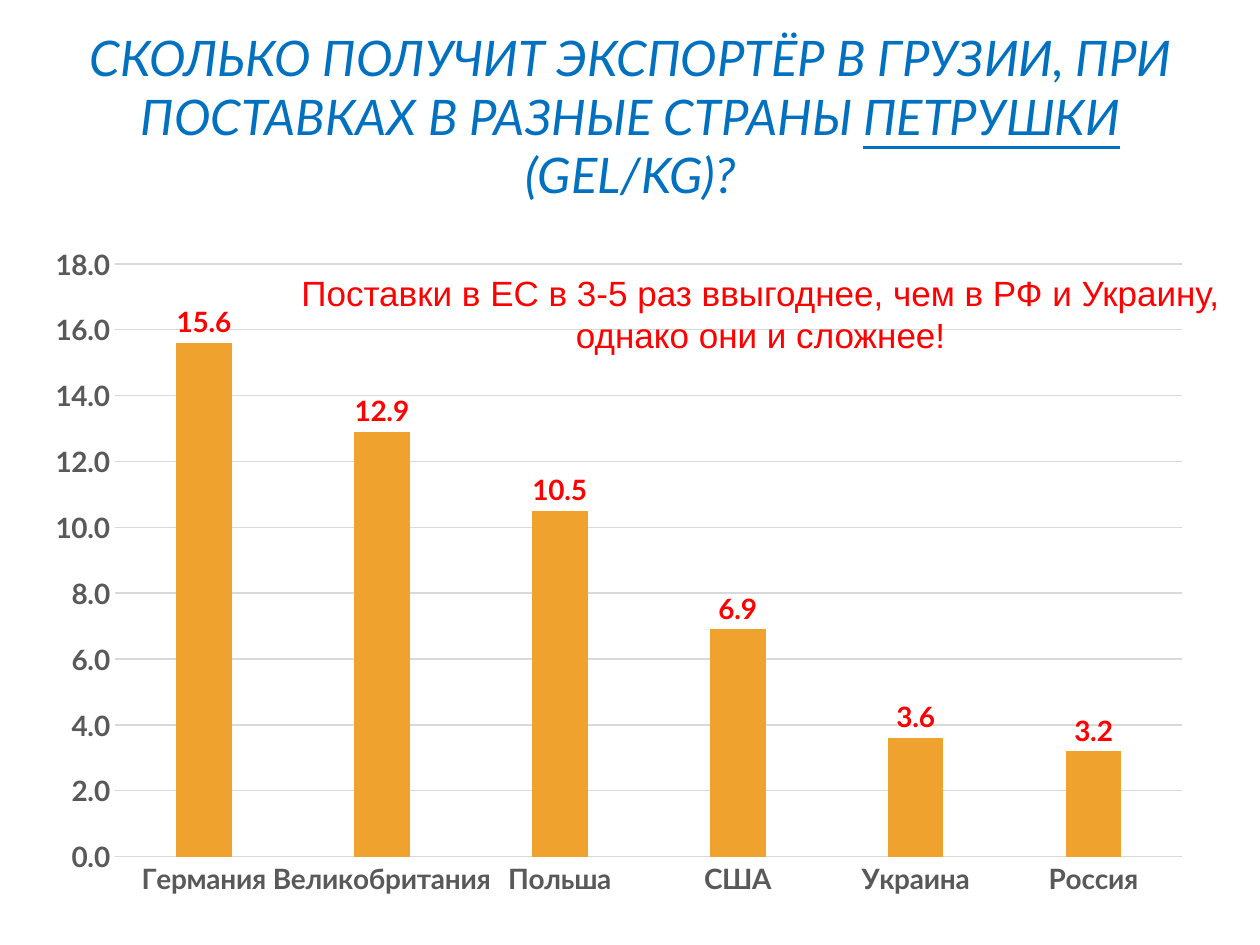
from dataclasses import dataclass

from pptx import Presentation
from pptx.chart.data import CategoryChartData
from pptx.dml.color import RGBColor as RGB
from pptx.enum.chart import XL_CHART_TYPE as ChartType
from pptx.enum.chart import XL_LABEL_POSITION as LabelPos
from pptx.enum.chart import XL_TICK_MARK as Tick
from pptx.enum.text import MSO_ANCHOR as Anchor
from pptx.enum.text import PP_ALIGN as Align
from pptx.util import Emu, Pt


@dataclass(frozen=True)
class Theme:
    title: RGB = RGB(0x00, 0x70, 0xC0)
    accent: RGB = RGB(0xFF, 0x00, 0x00)
    bar: RGB = RGB(0xF0, 0xA2, 0x2E)
    axis: RGB = RGB(0x59, 0x59, 0x59)
    grid: RGB = RGB(0xD9, 0xD9, 0xD9)
    paper: RGB = RGB(0xFF, 0xFF, 0xFF)
    font: str = "Lato"
    note_font: str = "Arial"
    title_size: int = 28
    note_size: int = 20
    chart_size: int = 16
    line: float = 0.75


@dataclass(frozen=True)
class Box:
    x: int
    y: int
    w: int
    h: int


@dataclass(frozen=True)
class Span:
    text: str
    underline: bool = False


@dataclass(frozen=True)
class Bar:
    country: str
    price: float


THEME = Theme()
SLIDE = Box(0, 0, 1260, 945)
TITLE = Box(32, 26, 1197, 179)
CHART = Box(32, 234, 1174, 674)
NOTE = Box(289, 265, 959, 97)
TITLE_SPANS = (
    Span("СКОЛЬКО ПОЛУЧИТ ЭКСПОРТЁР В ГРУЗИИ, ПРИ ПОСТАВКАХ В РАЗНЫЕ СТРАНЫ "),
    Span("ПЕТРУШКИ", underline=True),
    Span(" (GEL/KG)?"),
)
NOTE_LINES = (
    "Поставки в ЕС в 3-5 раз ввыгоднее, чем в РФ и Украину,",
    "однако они и сложнее!",
)
BARS = (
    Bar("Германия", 15.6),
    Bar("Великобритания", 12.9),
    Bar("Польша", 10.5),
    Bar("США", 6.9),
    Bar("Украина", 3.6),
    Bar("Россия", 3.2),
)


def px(n: int) -> Emu:
    """Turn pixels into EMU at 126 px to the inch."""
    return Emu(round(n * 914400 / 126))


def place(box: Box) -> tuple:
    """Give left, top, width and height in EMU."""
    return px(box.x), px(box.y), px(box.w), px(box.h)


def style_font(font, name: str, size: int, color: RGB, bold: bool = False) -> None:
    """Set the face, size, colour and weight of a font."""
    font.name, font.size, font.bold = name, Pt(size), bold
    font.color.rgb = color


def add_title(s, box: Box, spans: tuple[Span, ...]) -> None:
    """Add the centred italic title."""
    tf = s.shapes.add_textbox(*place(box)).text_frame
    tf.word_wrap, tf.vertical_anchor = True, Anchor.MIDDLE
    p = tf.paragraphs[0]
    p.alignment = Align.CENTER
    for span in spans:
        r = p.add_run()
        r.text = span.text
        style_font(r.font, THEME.font, THEME.title_size, THEME.title)
        r.font.italic, r.font.underline = True, span.underline


def style_axis(axis) -> None:
    """Hide the tick marks and format the axis labels."""
    axis.major_tick_mark = axis.minor_tick_mark = Tick.NONE
    style_font(axis.tick_labels.font, THEME.font, THEME.chart_size, THEME.axis, True)


def style_line(line) -> None:
    """Draw a thin grid line."""
    line.color.rgb, line.width = THEME.grid, Pt(THEME.line)


def add_price_chart(s, box: Box, bars: tuple[Bar, ...]) -> None:
    """Add the column chart of prices by country."""
    data = CategoryChartData(number_format="0.0")
    data.categories = [b.country for b in bars]
    data.add_series("Series 1", [b.price for b in bars])
    chart = s.shapes.add_chart(ChartType.COLUMN_CLUSTERED, *place(box), data).chart
    chart.has_legend = chart.has_title = False
    style_font(chart.font, THEME.font, THEME.chart_size, THEME.axis, True)

    cats, vals = chart.category_axis, chart.value_axis
    for axis in (cats, vals):
        style_axis(axis)
    style_line(cats.format.line)
    style_line(vals.major_gridlines.format.line)
    vals.format.line.fill.background()
    vals.minimum_scale, vals.maximum_scale, vals.major_unit = 0, 18, 2
    vals.tick_labels.number_format = "0.0"
    vals.tick_labels.number_format_is_linked = False

    plot = chart.plots[0]
    plot.gap_width, plot.overlap, plot.vary_by_categories = 219, -27, False
    fill = plot.series[0].format.fill
    fill.solid()
    fill.fore_color.rgb = THEME.bar
    labels = plot.series[0].data_labels
    labels.show_value, labels.position = True, LabelPos.OUTSIDE_END
    labels.number_format, labels.number_format_is_linked = "0.0", False
    style_font(labels.font, THEME.font, THEME.chart_size, THEME.accent, True)


def add_note(s, box: Box, lines: tuple[str, ...]) -> None:
    """Add the red remark over the chart."""
    tf = s.shapes.add_textbox(*place(box)).text_frame
    tf.word_wrap = False
    tf.text = "\n".join(lines)
    for p in tf.paragraphs:
        style_font(p.runs[0].font, THEME.note_font, THEME.note_size, THEME.accent)
    tf.paragraphs[-1].alignment = Align.CENTER


def main() -> None:
    """Build the slide and save it."""
    prs = Presentation()
    prs.slide_width, prs.slide_height = px(SLIDE.w), px(SLIDE.h)
    s = prs.slides.add_slide(prs.slide_layouts[6])
    s.background.fill.solid()
    s.background.fill.fore_color.rgb = THEME.paper
    add_title(s, TITLE, TITLE_SPANS)
    add_price_chart(s, CHART, BARS)
    add_note(s, NOTE, NOTE_LINES)
    prs.save("out.pptx")


if __name__ == "__main__":
    main()
